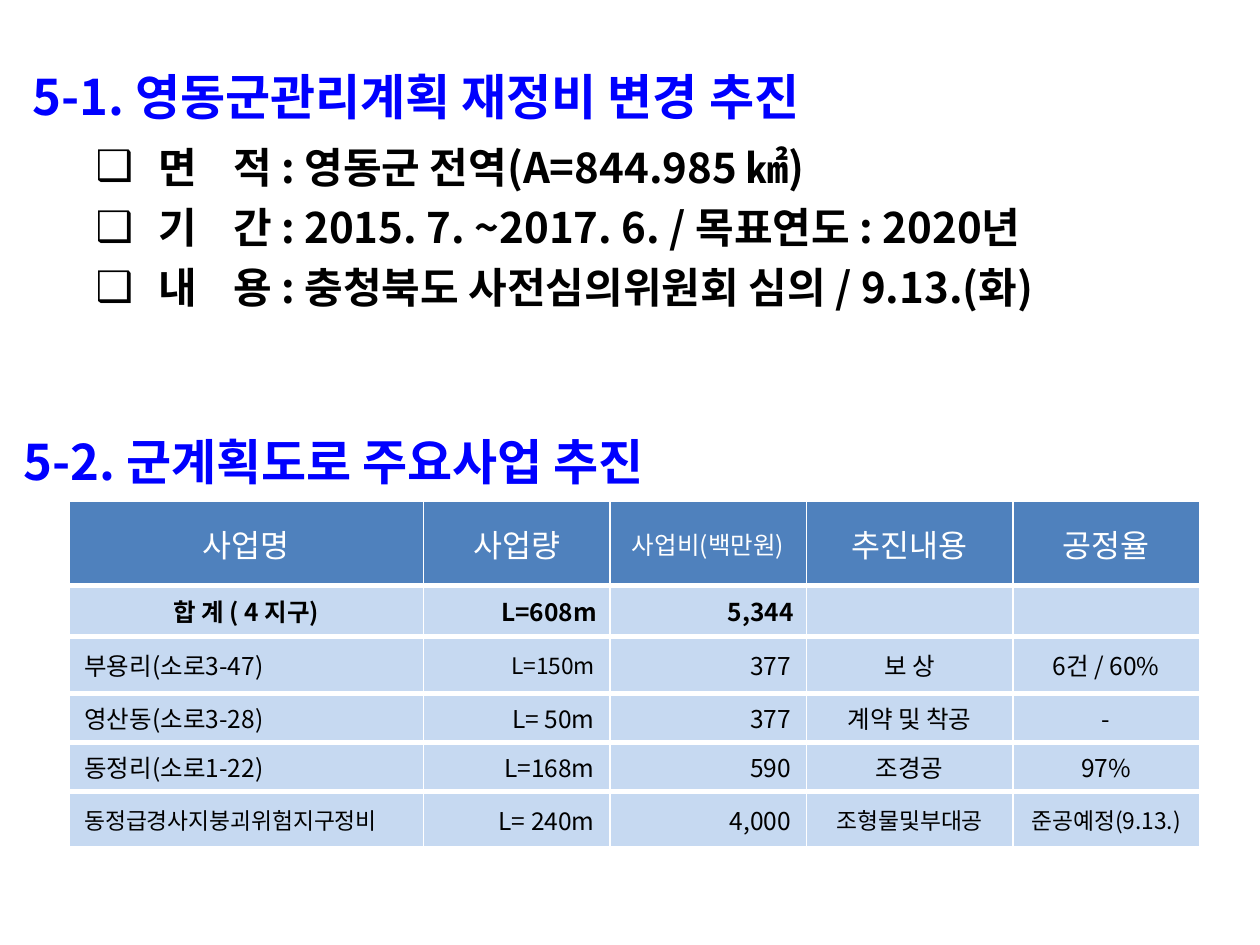
from dataclasses import dataclass
from lxml import etree
from pptx import Presentation
from pptx.dml.color import RGBColor
from pptx.enum.text import MSO_ANCHOR, MSO_AUTO_SIZE, PP_ALIGN
from pptx.oxml.ns import qn
from pptx.util import Inches, Pt

LEFT, MID, RIGHT = PP_ALIGN.LEFT, PP_ALIGN.CENTER, PP_ALIGN.RIGHT
CENTRE, TOP = MSO_ANCHOR.MIDDLE, MSO_ANCHOR.TOP
FIXED = MSO_AUTO_SIZE.NONE


@dataclass(frozen=True)
class Theme:
    font: str = "Noto Sans CJK KR"
    sign: str = "Arial"
    blue: str = "0000FF"
    black: str = "000000"
    white: str = "FFFFFF"
    head: str = "4F81BD"
    row: str = "C6D9F1"
    title: int = 28
    body: int = 24
    label: int = 18
    cell: int = 14
    small: int = 13


theme = Theme()


def write(para, text, size, color, bold=False, face=theme.font):
    run = para.add_run()
    run.text = text
    form = {"size": Pt(size), "bold": bold, "name": face}
    for key, value in form.items():
        setattr(run.font, key, value)
    run.font.color.rgb = RGBColor.from_string(color)
    props = run.font._element
    etree.SubElement(props, qn("a:ea"), typeface=face)


def place(shape, box, anchor):
    shape.left, shape.top, shape.width, shape.height = map(Inches, box)
    form = {"word_wrap": True, "auto_size": FIXED, "vertical_anchor": anchor,
            "margin_left": Inches(0.1), "margin_right": Inches(0.1),
            "margin_top": Inches(0.05), "margin_bottom": Inches(0.05)}
    for key, value in form.items():
        setattr(shape.text_frame, key, value)
    return shape.text_frame


deck = Presentation()
deck.slide_width, deck.slide_height = Inches(10), Inches(7.5)
slide = deck.slides.add_slide(deck.slide_layouts[1])
title, body = slide.placeholders
second = slide.shapes.add_textbox(0, 0, 0, 0)

heads = [
    (title, (0.16, 0.31, 9.69, 0.9), "5-1. 영동군관리계획 재정비 변경 추진"),
    (second, (0.09, 3.31, 9.52, 0.7), "5-2. 군계획도로 주요사업 추진"),
]
for shape, box, text in heads:
    para = place(shape, box, CENTRE).paragraphs[0]
    para.alignment = LEFT
    write(para, text, theme.title, theme.blue, True)

items = [
    [("면\t적 : 영동군 전역(A=844.985 ", theme.font), ("㎢", theme.sign), (")", theme.font)],
    [("기\t간 : 2015. 7. ~2017. 6. / 목표연도 : 2020년", theme.font)],
    [("내\t용 : 충청북도 사전심의위원회 심의 / 9.13.(화)", theme.font)],
]
frame = place(body, (0.16, 1.07, 9.69, 1.74), TOP)
for i, runs in enumerate(items):
    para = frame.paragraphs[0] if i == 0 else frame.add_paragraph()
    para.space_before = Pt(5.6 if i else 0)
    props = para._p.get_or_add_pPr()
    props.set("marL", str(Inches(1)))
    props.set("indent", str(Inches(-0.5)))
    color = etree.SubElement(props, qn("a:buClr"))
    etree.SubElement(color, qn("a:srgbClr"), val=theme.black)
    etree.SubElement(props, qn("a:buChar"), char="❑")
    tabs = etree.SubElement(props, qn("a:tabLst"))
    etree.SubElement(tabs, qn("a:tab"), pos=str(Inches(1.59)), algn="l")
    for text, face in runs:
        write(para, text, theme.body, theme.black, True, face)

rows = [
    ["사업명", "사업량", "사업비(백만원)", "추진내용", "공정율"],
    ["합 계 ( 4 지구)", "L=608m", "5,344", "", ""],
    ["부용리(소로3-47)", "L=150m", "377", "보 상", "6건 / 60%"],
    ["영산동(소로3-28)", "L= 50m", "377", "계약 및 착공", "-"],
    ["동정리(소로1-22)", "L=168m", "590", "조경공", "97%"],
    ["동정급경사지붕괴위험지구정비", "L= 240m", "4,000", "조형물및부대공", "준공예정(9.13.)"],
]
wides = [2.81, 1.48, 1.56, 1.64, 1.48]
highs = [0.47, 0.4, 0.45, 0.39, 0.39, 0.45]
aligns = [LEFT, RIGHT, RIGHT, MID, MID]
sizes = {(0, 2): theme.cell, (2, 1): theme.small, (5, 0): theme.small,
         (5, 3): theme.small, (5, 4): theme.small}

table = slide.shapes.add_table(len(rows), len(wides), Inches(0.55), Inches(3.98),
                               Inches(sum(wides)), Inches(sum(highs))).table
table.horz_banding = False
for col, wide in zip(table.columns, wides):
    col.width = Inches(wide)
for r, (row, high) in enumerate(zip(rows, highs)):
    table.rows[r].height = Inches(high)
    for c, text in enumerate(row):
        cell = table.cell(r, c)
        side = Inches(0.12 if r > 1 else 0.1)
        form = {"vertical_anchor": CENTRE, "margin_left": side, "margin_right": side,
                "margin_top": Inches(0.05), "margin_bottom": Inches(0.05)}
        for key, value in form.items():
            setattr(cell, key, value)
        props = cell._tc.get_or_add_tcPr()
        edges = {"a:lnL": 1, "a:lnR": 1, "a:lnT": 3 if r else 1, "a:lnB": 3}
        for edge, wide in edges.items():
            line = etree.SubElement(props, qn(edge), w=str(Pt(wide)))
            fill = etree.SubElement(line, qn("a:solidFill"))
            etree.SubElement(fill, qn("a:srgbClr"), val=theme.white)
        cell.fill.solid()
        cell.fill.fore_color.rgb = RGBColor.from_string(theme.row if r else theme.head)
        para = cell.text_frame.paragraphs[0]
        para.alignment = MID if r == 0 or (r == 1 and c == 0) else aligns[c]
        if text:
            size = sizes.get((r, c), theme.cell if r else theme.label)
            write(para, text, size, theme.black if r else theme.white, r == 1)

deck.save("out.pptx")
